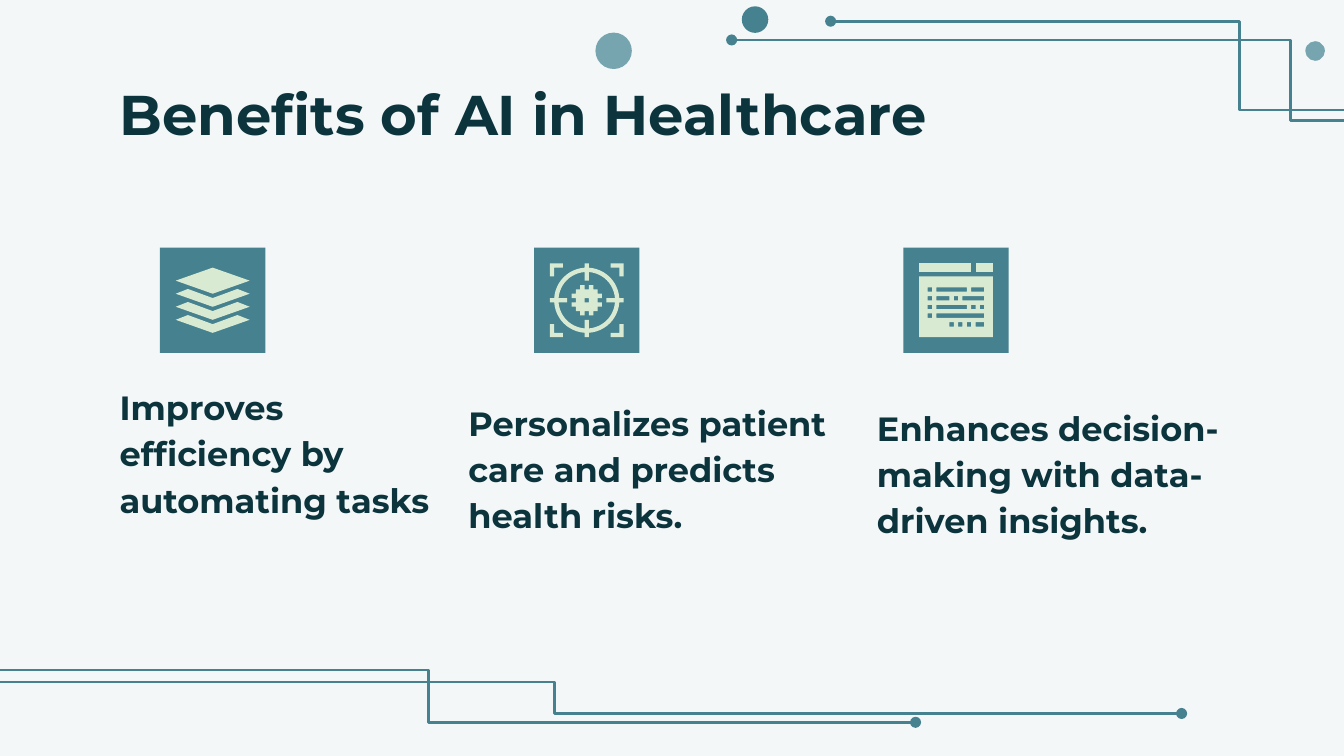
"""Build the slide on the benefits of AI in healthcare."""
from math import asin, cos, pi, sin

from lxml.etree import SubElement
from pptx import Presentation
from pptx.dml.color import RGBColor
from pptx.enum.shapes import MSO_CONNECTOR, MSO_SHAPE
from pptx.enum.text import MSO_ANCHOR, MSO_AUTO_SIZE, PP_ALIGN
from pptx.oxml.ns import qn
from pptx.util import Pt

BACKGROUND = RGBColor(0xF3, 0xF7, 0xF8)
TEAL = RGBColor(0x45, 0x81, 0x8E)
LIGHT_TEAL = RGBColor(0x76, 0xA5, 0xAF)
PALE_GREEN = RGBColor(0xD9, 0xEA, 0xD3)
DARK = RGBColor(0x0C, 0x34, 0x3D)
FONT = "Montserrat"

TITLE = ("Benefits of AI in Healthcare", (56.9, 35.2, 607, 45.4))
BENEFITS = [
    ("Improves efficiency by automating tasks", (56.9, 208, 188.6, 77.8)),
    ("Personalizes patient care and predicts health risks.", (243.7, 200, 209.5, 94.2)),
    ("Enhances decision-making with data-driven insights.", (462.6, 208, 199.4, 88.9)),
]
DOTS = [
    (319, 17.5, 19.5, LIGHT_TEAL),
    (397.4, 3.4, 14.2, TEAL),
    (699.3, 22.1, 10.5, LIGHT_TEAL),
]
CIRCUITS = [
    ((761, 64.4), (392, 21.4), 0.189),
    ((771, 59), (445, 11.4), 0.328),
    ((-38.9, 365.4), (633, 382.2), 0.5),
    ((-31.7, 359), (490.5, 387), 0.5),
]

TILE_LEFTS = (85.7, 286.1, 483.9)
TILE_TOP = 132.6
TILE_SIZE = 56.5
GRID = 17
CELL = 2.33
ICON_INSET = (TILE_SIZE - GRID * CELL) / 2

LAYER = [(2.8, 5.9), (0, 7), (8.5, 10), (17, 7), (14.2, 5.9), (8.5, 8)]
CODE_ROWS = [
    [(2, 3), (4, 11), (12, 15)],
    [(2, 3), (4, 7), (8, 9), (10, 15)],
    [(2, 3), (4, 11), (12, 13), (14, 15)],
    [(2, 3), (4, 15)],
    [(7, 8), (9, 10), (11, 12), (13, 15)],
]
BRACKET = [(-8.5, -8.5), (-8.5, -5.5), (-7.5, -5.5), (-7.5, -7.5), (-5.5, -7.5), (-5.5, -8.5)]
CHIP_QUARTER = [
    (-0.5, -2.5), (-0.5, -3.5), (-1.5, -3.5), (-1.5, -2.5), (-2.5, -2.5),
    (-2.5, -1.5), (-3.5, -1.5), (-3.5, -0.5), (-2.5, -0.5),
]


def rectangle(left, top, right, bottom):
    return [(left, top), (left, bottom), (right, bottom), (right, top)]


def quarter_turns(points):
    """Return the points in four quarter turns around the grid's centre."""
    turns = []
    for _ in range(4):
        turns.append([(x + GRID / 2, y + GRID / 2) for x, y in points])
        points = [(y, -x) for x, y in points]
    return turns


def ring_edge(tick, radius, steps=12):
    """Return a circle's outline with four ticks one cell wide."""
    start = asin(0.5 / radius)
    angles = [start + (pi / 2 - 2 * start) * step / steps for step in range(steps + 1)]
    arc = [(radius * cos(angle), -radius * sin(angle)) for angle in angles]
    return sum(quarter_turns([(tick, 0.5), (tick, -0.5)] + arc), [])


def layers_icon():
    diamond = [(8.5, 1), (0, 4), (8.5, 7), (17, 4)]
    return [[diamond]] + [[[(x, y + shift) for x, y in LAYER]] for shift in (0, 3, 6)]


def target_icon():
    ring = [ring_edge(8.5, 7.5), ring_edge(4.5, 6.5)]
    chip = [sum(quarter_turns(CHIP_QUARTER), []), rectangle(8, 8, 9, 9)]
    return [ring, chip] + [[bracket] for bracket in quarter_turns(BRACKET)]


def browser_icon():
    page = [rectangle(0, 3, 17, 17)]
    for row, spans in enumerate(CODE_ROWS):
        top = 5.55 + 2 * row
        page += [rectangle(left, top, right, top + 1) for left, right in spans]
    return [[rectangle(0, 0, 12, 2)], [rectangle(13, 0, 17, 2)], page]


def paint(shape, color):
    shape.shadow.inherit = False
    shape.fill.solid()
    shape.fill.fore_color.rgb = color
    shape.line.fill.background()


def add_icon(slide, tile_left, figures):
    tile = slide.shapes.add_shape(
        MSO_SHAPE.RECTANGLE, Pt(tile_left), Pt(TILE_TOP), Pt(TILE_SIZE), Pt(TILE_SIZE))
    paint(tile, TEAL)
    group = slide.shapes.add_group_shape()
    for contours in figures:
        placed = [[(Pt(tile_left + ICON_INSET + x * CELL), Pt(TILE_TOP + ICON_INSET + y * CELL))
                   for x, y in contour] for contour in contours]
        builder = group.shapes.build_freeform(*placed[0][0])
        builder.add_line_segments(placed[0][1:])
        for hole in placed[1:]:
            builder.move_to(*hole[0])
            builder.add_line_segments(hole[1:])
        paint(builder.convert_to_shape(), PALE_GREEN)


def add_circuit(slide, start, end, bend):
    connector = slide.shapes.add_connector(
        MSO_CONNECTOR.ELBOW, *[Pt(value) for value in start + end])
    connector.line.color.rgb = TEAL
    connector.line.width = Pt(1.5)
    SubElement(connector.line._get_or_add_ln(), qn("a:tailEnd"), type="oval")
    properties = connector._element.spPr
    SubElement(properties, qn("a:effectLst"))
    adjustments = properties.find(qn("a:prstGeom")).get_or_add_avLst()
    SubElement(adjustments, qn("a:gd"), name="adj1", fmla=f"val {round(bend * 100000)}")


def fill_placeholder(shape, text, box, size, anchor, spacing):
    shape.left, shape.top, shape.width, shape.height = [Pt(value) for value in box]
    frame = shape.text_frame
    frame.text = text
    frame.word_wrap = True
    frame.auto_size = MSO_AUTO_SIZE.NONE
    frame.vertical_anchor = anchor
    frame.margin_left = frame.margin_right = frame.margin_top = frame.margin_bottom = Pt(7.2)
    paragraph = frame.paragraphs[0]
    paragraph.alignment = PP_ALIGN.LEFT
    paragraph.line_spacing = spacing
    paragraph.space_before = Pt(0)
    properties = paragraph._p.get_or_add_pPr()
    properties.set("marL", "0")
    properties.set("indent", "0")
    SubElement(properties, qn("a:buNone"))
    font = paragraph.font
    font.name = FONT
    font.size = Pt(size)
    font.bold = True
    font.color.rgb = DARK


def main():
    presentation = Presentation()
    presentation.slide_width, presentation.slide_height = Pt(720), Pt(405)
    slide = presentation.slides.add_slide(presentation.slide_layouts.get_by_name("Comparison"))
    slide.background.fill.solid()
    slide.background.fill.fore_color.rgb = BACKGROUND

    title, *bodies, spare = slide.placeholders
    spare._element.getparent().remove(spare._element)
    fill_placeholder(title, *TITLE, 30, MSO_ANCHOR.TOP, 1.0)
    for body, (text, box) in zip(bodies, BENEFITS):
        fill_placeholder(body, text, box, 18, MSO_ANCHOR.BOTTOM, 1.15)

    for left, top, size, color in DOTS:
        dot = slide.shapes.add_shape(MSO_SHAPE.OVAL, Pt(left), Pt(top), Pt(size), Pt(size))
        paint(dot, color)
    for start, end, bend in CIRCUITS:
        add_circuit(slide, start, end, bend)
    for tile_left, figures in zip(TILE_LEFTS, (layers_icon(), target_icon(), browser_icon())):
        add_icon(slide, tile_left, figures)
    presentation.save("out.pptx")


if __name__ == "__main__":
    main()
